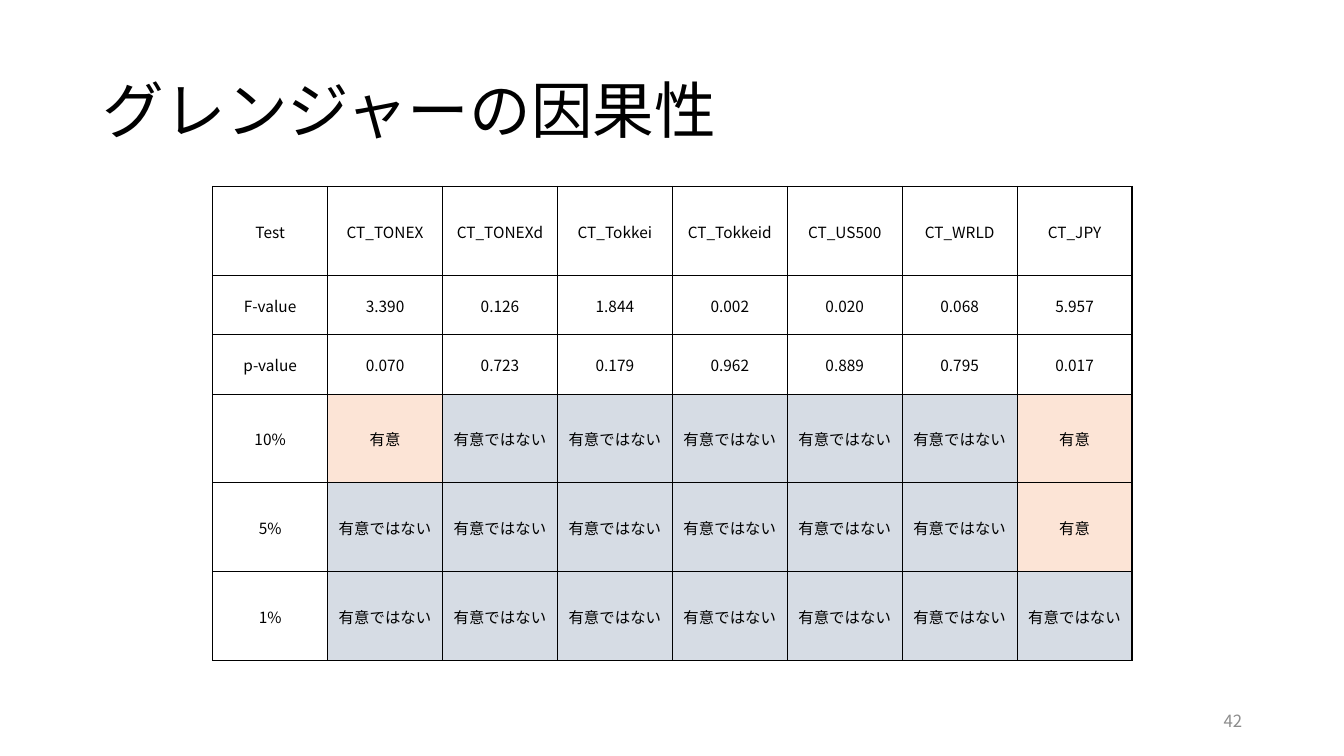
"""Build the Granger causality slide with its table of test results."""
import pptx
import pptx.dml.color
import pptx.enum.text
import pptx.oxml
import pptx.oxml.ns
import pptx.util
from pptx.util import Inches

COLORS = {
    "text": "000000",
    "border": "000000",
    "plain": "FFFFFF",
    "significant": "FCE4D6",
    "not_significant": "D6DCE4",
    "slide_number": "8C8C8C",
}
FONT = "Noto Sans CJK JP"
ALIGN = pptx.enum.text.PP_ALIGN
MIDDLE = pptx.enum.text.MSO_ANCHOR.MIDDLE


def add_run(paragraph, text, size, color, alignment):
    run = paragraph.add_run()
    run.text = text
    run.font.size = pptx.util.Pt(size)
    run.font.color.rgb = pptx.dml.color.RGBColor.from_string(COLORS[color])
    run.font.name = FONT
    east_asian = pptx.oxml.parse_xml(
        f'<a:ea {pptx.oxml.ns.nsdecls("a")} typeface="{FONT}"/>')
    run.font._element.append(east_asian)
    paragraph.alignment = alignment


def add_border(cell, side, width):
    cell._tc.get_or_add_tcPr().append(pptx.oxml.parse_xml(
        f'<a:ln{side} {pptx.oxml.ns.nsdecls("a")} w="{pptx.util.Pt(width)}">'
        f'<a:solidFill><a:srgbClr val="{COLORS["border"]}"/></a:solidFill>'
        f'</a:ln{side}>'))


presentation = pptx.Presentation()
presentation.slide_width = Inches(13.33)
presentation.slide_height = Inches(7.5)
slide = presentation.slides.add_slide(presentation.slide_layouts[5])

title = slide.shapes.title
title.left, title.top = Inches(0.92), Inches(0.4)
title.width, title.height = Inches(11.5), Inches(1.45)
title.text_frame.word_wrap = True
title.text_frame.auto_size = pptx.enum.text.MSO_AUTO_SIZE.NONE
title.text_frame.vertical_anchor = MIDDLE
title_paragraph = title.text_frame.paragraphs[0]
title_paragraph.line_spacing = 0.9
add_run(title_paragraph, "グレンジャーの因果性", 44, "text", ALIGN.LEFT)

series = ["CT_TONEX", "CT_TONEXd", "CT_Tokkei", "CT_Tokkeid",
          "CT_US500", "CT_WRLD", "CT_JPY"]
f_values = [3.390, 0.126, 1.844, 0.002, 0.020, 0.068, 5.957]
p_values = [0.070, 0.723, 0.179, 0.962, 0.889, 0.795, 0.017]
rows = [
    ["Test"] + series,
    ["F-value"] + [f"{value:.3f}" for value in f_values],
    ["p-value"] + [f"{value:.3f}" for value in p_values],
]
for level in (10, 5, 1):
    verdicts = ["有意" if value < level / 100 else "有意ではない"
                for value in p_values]
    rows.append([f"{level}%"] + verdicts)
verdict_fills = {"有意": "significant", "有意ではない": "not_significant"}

row_heights = [0.88, 0.59, 0.59, 0.88, 0.88, 0.88]
last_row, last_column = len(rows) - 1, len(series)
table = slide.shapes.add_table(
    len(rows), len(rows[0]), Inches(2.11), Inches(1.85),
    Inches(9.12), Inches(sum(row_heights))).table
table.first_row = False
table.horz_banding = False
for column in table.columns:
    column.width = Inches(1.14)

for row_index, texts in enumerate(rows):
    table.rows[row_index].height = Inches(row_heights[row_index])
    for column_index, text in enumerate(texts):
        cell = table.cell(row_index, column_index)
        cell.margin_left = cell.margin_right = cell.margin_top = Inches(0.01)
        cell.margin_bottom = 0
        cell.vertical_anchor = MIDDLE
        outer_sides = {
            "L": column_index == 0,
            "R": column_index == last_column,
            "T": row_index == 0,
            "B": row_index == last_row,
        }
        for side, is_outer in outer_sides.items():
            add_border(cell, side, 1 if is_outer else 0.5)
        cell.fill.solid()
        fill_color = COLORS[verdict_fills.get(text, "plain")]
        cell.fill.fore_color.rgb = pptx.dml.color.RGBColor.from_string(fill_color)
        add_run(cell.text_frame.paragraphs[0], text, 11, "text", ALIGN.CENTER)

slide_number = slide.shapes.add_textbox(
    Inches(9.42), Inches(6.95), Inches(3), Inches(0.4))
slide_number.text_frame.word_wrap = True
slide_number.text_frame.vertical_anchor = MIDDLE
add_run(slide_number.text_frame.paragraphs[0], "42", 12, "slide_number", ALIGN.RIGHT)

presentation.save("out.pptx")
